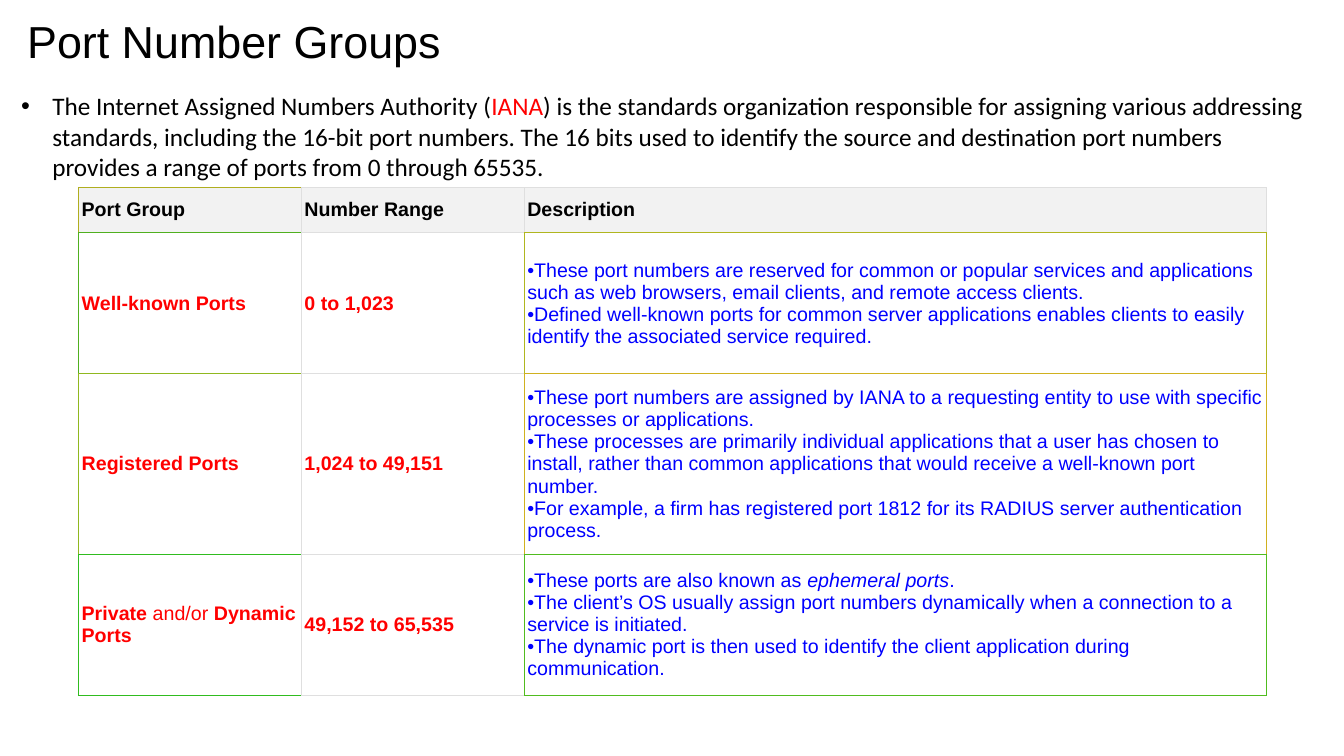
from lxml.etree import SubElement as Sub
from pptx import Presentation
from pptx.dml.color import RGBColor
from pptx.enum.text import MSO_ANCHOR as Anchor, MSO_AUTO_SIZE as Fit, PP_ALIGN as Align
from pptx.oxml.ns import qn
from pptx.util import Inches, Pt

GREY, RED, BLUE, BLACK = "DFDFDF", "FF0000", "0000FF", "000000"
LEFT = ["B0AE1F", "50B01F", "90B81F", "30BC1F"]
RIGHT = [GREY, "B0B61F", "D0B11F", "50BC1F"]
COLS = [2.21, 2.21, 7.36]
ROWS = [0.45, 1.4, 1.79, 1.4]

INTRO = [
    ("The Internet Assigned Numbers Authority (", BLACK),
    ("IANA", RED),
    (") is the standards organization responsible for assigning various addressing "
     "standards, including the 16-bit port numbers. The 16 bits used to identify the "
     "source and destination port numbers provides a range of ports from 0 through 65535.", BLACK),
]

HEADS = ["Port Group", "Number Range", "Description"]
GROUPS = [
    ([("Well-known Ports", "b")], "0 to 1,023", [
        [("These port numbers are reserved for common or popular services and applications "
          "such as web browsers, email clients, and remote access clients.", "")],
        [("Defined well-known ports for common server applications enables clients to easily "
          "identify the associated service required.", "")],
    ]),
    ([("Registered Ports", "b")], "1,024 to 49,151", [
        [("These port numbers are assigned by IANA to a requesting entity to use with specific "
          "processes or applications.", "")],
        [("These processes are primarily individual applications that a user has chosen to "
          "install, rather than common applications that would receive a well-known port "
          "number.", "")],
        [("For example, a firm has registered port 1812 for its RADIUS server authentication "
          "process.", "")],
    ]),
    ([("Private ", "b"), ("and/or", ""), (" Dynamic Ports", "b")], "49,152 to 65,535", [
        [("These ports are also known as ", ""), ("ephemeral ports", "i"), (".", "")],
        [("The client’s OS usually assign port numbers dynamically when a connection to a "
          "service is initiated.", "")],
        [("The dynamic port is then used to identify the client application during "
          "communication.", "")],
    ]),
]


def paint(hue):
    return RGBColor.from_string(hue)


def place(shape, box):
    shape.left, shape.top, shape.width, shape.height = map(Inches, box)


def add_run(para, text, face, size, hue, style=""):
    run = para.add_run()
    run.text = text
    font = run.font
    font.name, font.size = face, Pt(size)
    font.bold, font.italic = "b" in style, "i" in style
    font.color.rgb = paint(hue)


def bullet(para, indent=0):
    props = para._p.get_or_add_pPr()
    props.set("marL", str(Inches(indent)))
    props.set("indent", str(-Inches(indent)))
    Sub(props, qn("a:buFont"), typeface="Arial")
    Sub(props, qn("a:buChar"), char="•")


def add_title(slide, box):
    title = slide.shapes.title
    place(title, box)
    frame = title.text_frame
    frame.margin_left = 0
    frame.vertical_anchor = Anchor.MIDDLE
    frame.auto_size = Fit.NONE
    para = frame.paragraphs[0]
    para.alignment, para.line_spacing = Align.LEFT, 0.9
    add_run(para, "Port Number Groups", "Arial", 32, BLACK)


def add_intro(slide, box):
    body = slide.placeholders[1]
    place(body, box)
    frame = body.text_frame
    frame.auto_size = Fit.SHAPE_TO_FIT_TEXT
    para = frame.paragraphs[0]
    bullet(para, 0.31)
    para.space_before = Pt(0)
    for text, hue in INTRO:
        add_run(para, text, "Calibri", 18, hue)


def edge(cell, hues):
    props = cell._tc.get_or_add_tcPr()
    for side, hue in zip("LRTB", hues):
        line = Sub(props, qn(f"a:ln{side}"), w=str(Pt(0.75)))
        Sub(Sub(line, qn("a:solidFill")), qn("a:srgbClr"), val=hue)


def borders(row, col):
    after = min(row + 1, len(ROWS) - 1)
    return [
        (LEFT[row], GREY, LEFT[row], LEFT[after]),
        (GREY, RIGHT[row], GREY, GREY),
        (RIGHT[row], RIGHT[row], RIGHT[row], RIGHT[after]),
    ][col]


def fill_cell(cell, paras, hue, back, hues, listed):
    edge(cell, hues)
    cell.fill.solid()
    cell.fill.fore_color.rgb = paint(back)
    cell.vertical_anchor = Anchor.MIDDLE
    cell.margin_left = cell.margin_right = Inches(0.03)
    cell.margin_top = cell.margin_bottom = Inches(0.03)
    frame = cell.text_frame
    for num, runs in enumerate(paras):
        para = frame.add_paragraph() if num else frame.paragraphs[0]
        if listed:
            bullet(para)
        for text, style in runs:
            add_run(para, text, "Arial", 14, hue, style)


def add_ports(slide, box):
    table = slide.shapes.add_table(len(ROWS), len(COLS), *map(Inches, box)).table
    table.first_row = table.horz_banding = False
    for col, width in zip(table.columns, COLS):
        col.width = Inches(width)
    for row, height in zip(table.rows, ROWS):
        row.height = Inches(height)
    grid = [[[[(head, "b")]] for head in HEADS]]
    grid += [[[name], [[(span, "b")]], notes] for name, span, notes in GROUPS]
    for row, line in enumerate(grid):
        for col, paras in enumerate(line):
            listed = row > 0 and col == 2
            hue = BLACK if row == 0 else BLUE if listed else RED
            back = "FFFFFF" if row else "F2F2F2"
            fill_cell(table.cell(row, col), paras, hue, back, borders(row, col), listed)


def main():
    deck = Presentation()
    deck.slide_width, deck.slide_height = Inches(13.33), Inches(7.5)
    slide = deck.slides.add_slide(deck.slide_layouts[1])
    add_title(slide, (0.27, 0.16, 11.82, 0.56))
    add_intro(slide, (0.11, 0.85, 12.93, 1.01))
    add_ports(slide, (0.78, 1.86, sum(COLS), sum(ROWS)))
    deck.save("out.pptx")


if __name__ == "__main__":
    main()
